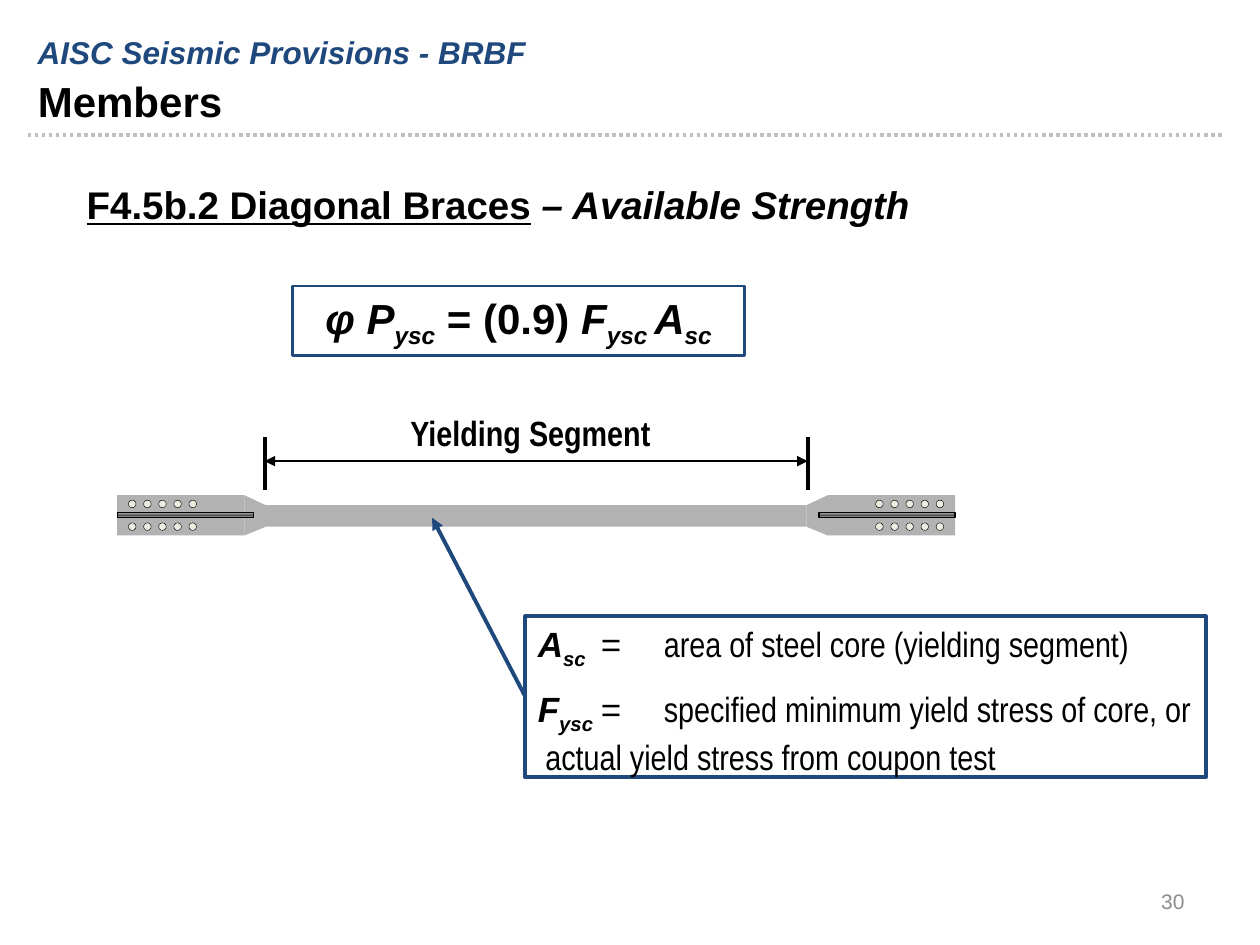
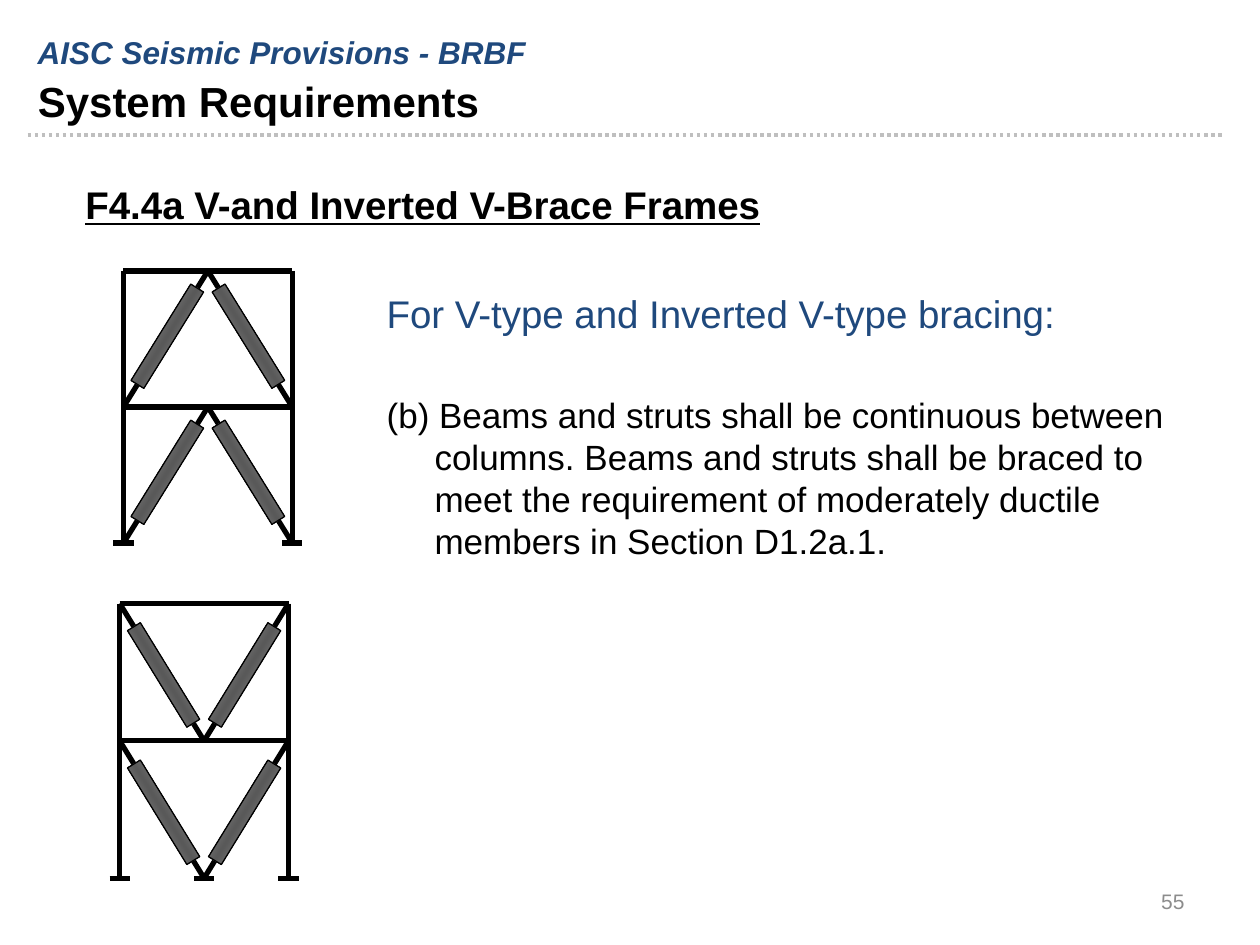
import copy
import math
from pptx import Presentation
from pptx import util as u
from pptx.dml.color import RGBColor
from pptx.enum import dml, shapes, text
from pptx.oxml.ns import qn
from pptx.oxml.xmlchemy import OxmlElement

INK, NAVY, STEEL, RULE, BOLT, PAGE = "000000", "1F497D", "B2B2B2", "BFBFBF", "EEECE1", "8C8C8C"
CORE_GRADIENT = (STEEL, "525252", STEEL)
SLEEVE_GRADIENT = ("C0C0C0", "595959", "C0C0C0")
RECT, OVAL = shapes.MSO_SHAPE.RECTANGLE, shapes.MSO_SHAPE.OVAL
SYMBOL = dict(bold=True, italic=True)
SUB = dict(SYMBOL, baseline=-25000)
NARROW = dict(name="Arial Narrow")


def rgb(code):
    return RGBColor.from_string(code)


def inches(*lengths):
    return [u.Inches(length) for length in lengths]


def write(holder, paragraphs, size, color=INK, align=text.PP_ALIGN.LEFT,
          anchor=text.MSO_ANCHOR.TOP, gaps=(), margins=(), tabs=()):
    frame = holder.text_frame
    layout = dict(word_wrap=True, vertical_anchor=anchor, auto_size=text.MSO_AUTO_SIZE.NONE,
                  margin_left=u.Inches(0.1), margin_right=u.Inches(0.1),
                  margin_top=u.Inches(0.05), margin_bottom=u.Inches(0.05))
    for key, value in layout.items():
        setattr(frame, key, value)
    for index, runs in enumerate(paragraphs):
        line = frame.paragraphs[0] if index == 0 else frame.add_paragraph()
        line.alignment = align
        line.space_before = u.Pt(gaps[index] if gaps else 0)
        props = line._p.get_or_add_pPr()
        left, first = margins[index] if margins else (0, 0)
        props.set("marL", str(u.Inches(left)))
        props.set("indent", str(u.Inches(first)))
        if tabs:
            stops = OxmlElement("a:tabLst")
            for position in tabs:
                stop = OxmlElement("a:tab")
                stop.set("pos", str(u.Inches(position)))
                stop.set("algn", "l")
                stops.append(stop)
            props.append(stops)
        for words, style in runs:
            run = line.add_run()
            run.text = words
            font = dict(name="Arial", size=u.Pt(size), bold=False, italic=False)
            font.update(style)
            baseline = font.pop("baseline", None)
            for key, value in font.items():
                setattr(run.font, key, value)
            run.font.color.rgb = rgb(color)
            if baseline:
                run._r.get_or_add_rPr().set("baseline", str(baseline))


def text_box(slide, box, paragraphs, size, **layout):
    write(slide.shapes.add_textbox(*inches(*box)), paragraphs, size, **layout)


def paint(shape, fill=None, line=None, width=0.75):
    shape.shadow.inherit = False
    if fill is None:
        shape.fill.background()
    elif isinstance(fill, str):
        shape.fill.solid()
        shape.fill.fore_color.rgb = rgb(fill)
    else:
        shape.fill.gradient()
        shape.fill.gradient_angle = 90
        stops = shape._element.spPr.find(".//" + qn("a:gsLst"))
        stops.insert(1, copy.deepcopy(stops[0]))
        for index, stop in enumerate(shape.fill.gradient_stops):
            stop.position = index / 2
            stop.color.rgb = rgb(fill[index])
    if line:
        shape.line.color.rgb = rgb(line)
        shape.line.width = u.Pt(width)
    else:
        shape.line.fill.background()


def block(slide, kind, box, **look):
    shape = slide.shapes.add_shape(kind, *inches(*box))
    paint(shape, **look)
    return shape


def connect(slide, start, end, color=INK, width=3, dash=None, arrows=()):
    link = slide.shapes.add_connector(shapes.MSO_CONNECTOR.STRAIGHT, *inches(*start, *end))
    link.line.color.rgb = rgb(color)
    link.line.width = u.Pt(width)
    if dash:
        link.line.dash_style = dash
    for arrow in arrows:
        tip = OxmlElement("a:" + arrow)
        tip.set("type", "triangle")
        link.line._get_or_add_ln().append(tip)
    link._element.spPr.append(OxmlElement("a:effectLst"))


def start_slide(deck, title, section, section_left, number):
    slide = deck.slides.add_slide(deck.slide_layouts[5])
    heading = slide.shapes.title
    place = dict(zip(("left", "top", "width", "height"), inches(0.2, 0.55, 8.98, 0.44)))
    for key, value in place.items():
        setattr(heading, key, value)
    write(heading, [[(title, dict(bold=True))]], 24)
    text_box(slide, (0.2, 0.21, 8.98, 0.31),
             [[("AISC Seismic Provisions - BRBF", SYMBOL)]], 18, color=NAVY)
    connect(slide, (0.22, 1.07), (9.72, 1.07), RULE, 2, dml.MSO_LINE.ROUND_DOT)
    text_box(slide, (section_left, 1.39, 6.86, 0.47), [section], 22)
    text_box(slide, (7.17, 6.95, 2.33, 0.4), [[(number, {})]], 12, color=PAGE,
             align=text.PP_ALIGN.RIGHT, anchor=text.MSO_ANCHOR.MIDDLE)
    return slide


def draw_brace(slide, left, top, width, height):
    end, neck, core_top, core = 1.01, 1.18, 0.08, 0.17
    block(slide, RECT, (left + neck, top + core_top, width - 2 * neck, core), fill=STEEL)
    for mirrored in (False, True):
        def across(x, part=0):
            return left + (width - x - part if mirrored else x)

        outline = [inches(across(x), top + y) for x, y in
                   ((end, height), (neck, core_top + core), (neck, core_top), (end, 0))]
        taper = slide.shapes.build_freeform(*outline[0])
        taper.add_line_segments(outline[1:], close=True)
        paint(taper.convert_to_shape(), fill=STEEL)
        block(slide, RECT, (across(0, end), top, end, height), fill=STEEL)
        block(slide, RECT, (across(0, 1.08), top + 0.14, 1.08, 0.04),
              fill=CORE_GRADIENT, line=INK)
        for row in (0.04, 0.22):
            for column in range(5):
                block(slide, OVAL, (across(0.09 + 0.12 * column, 0.06), top + row, 0.06, 0.06),
                      fill=BOLT, line=INK, width=0.25)


def draw_dimension(slide, left, top, width, height):
    for x in (left, left + width):
        connect(slide, (x, top), (x, top + height), width=2.25)
    connect(slide, (left, top + 0.19), (left + width, top + 0.19), width=1.5,
            arrows=("headEnd", "tailEnd"))
    text_box(slide, (left + 0.41, top - 0.25, 3.4, 0.43),
             [[("Yielding Segment", dict(NARROW, bold=True))]], 20, align=text.PP_ALIGN.CENTER)


def draw_definitions(slide, left, top, width, height):
    box = block(slide, RECT, (left, top, width, height), line=NAVY, width=2.25)
    write(box, [
        [("A", SYMBOL), ("sc", SUB), ("\t=\t", {}),
         ("area of steel core (yielding segment)", NARROW)],
        [("F", SYMBOL), ("ysc", SUB), ("\t=\t", {}),
         ("specified minimum yield stress of core, or", NARROW)],
        [("actual yield stress from coupon test", NARROW)],
    ], 20, gaps=(0, 10, 0), margins=((0, 0), (0, 0), (0.06, 0)), tabs=(0.53, 0.84))
    connect(slide, (left, top + height / 2), (3.43, 4.11), NAVY, 2.25, arrows=("tailEnd",))


def draw_frame(slide, left, top, width, story, inverted):
    right, middle = left + width, left + width / 2
    base = top + 2 * story
    for level in (0, 1):
        roof = top + level * story
        floor = roof + story
        connect(slide, (left, roof), (right, roof))
        apex_y, foot_y = (roof, floor) if inverted else (floor, roof)
        for column in (left, right):
            connect(slide, (column, roof), (column, floor))
            connect(slide, (middle, apex_y), (column, foot_y))
            run, rise = column - middle, foot_y - apex_y
            x, y = middle + 0.48 * run, apex_y + 0.48 * rise
            sleeve = block(slide, RECT, (x - 0.45, y - 0.06, 0.9, 0.12),
                           fill=SLEEVE_GRADIENT, line=INK)
            sleeve.rotation = math.degrees(math.atan(rise / run)) % 360
    for foot in (left, right) if inverted else (left, middle, right):
        connect(slide, (foot - 0.08, base), (foot + 0.08, base))


def members_slide(deck):
    section = [("F4.5b.2 Diagonal Braces", dict(bold=True, underline=True)),
               (" – Available Strength", SYMBOL)]
    slide = start_slide(deck, "Members", section, 0.59, "30")
    formula = block(slide, RECT, (2.32, 2.27, 3.59, 0.55), line=NAVY, width=1.5)
    write(formula, [[("φ P", SYMBOL), ("ysc", SUB), (" = (0.9) ", dict(bold=True)),
                     ("F", SYMBOL), ("ysc ", SUB), ("A", SYMBOL), ("sc", SUB)]],
          24, align=text.PP_ALIGN.CENTER)
    draw_brace(slide, 0.93, 3.93, 6.65, 0.32)
    draw_dimension(slide, 2.1, 3.47, 4.31, 0.42)
    draw_definitions(slide, 4.17, 4.89, 5.4, 1.28)


def system_slide(deck):
    section = [("F4.4a V-and Inverted V-Brace Frames", dict(bold=True, underline=True))]
    slide = start_slide(deck, "System Requirements", section, 0.58, "55")
    text_box(slide, (2.97, 2.25, 6.42, 0.47),
             [[("For V-type and Inverted V-type bracing:", {})]], 22, color=NAVY)
    text_box(slide, (2.97, 3.07, 6.61, 1.78), [[(
        "(b) Beams and struts shall be continuous between columns. Beams and struts shall be "
        "braced to meet the requirement of moderately ductile members in Section D1.2a.1.", {})]],
        20, margins=((0.38, -0.38),))
    draw_frame(slide, 0.98, 2.15, 1.34, 1.08, inverted=True)
    draw_frame(slide, 0.95, 4.79, 1.34, 1.09, inverted=False)


def main():
    deck = Presentation()
    deck.slide_width, deck.slide_height = inches(10, 7.5)
    members_slide(deck)
    system_slide(deck)
    deck.save("out.pptx")


if __name__ == "__main__":
    main()
